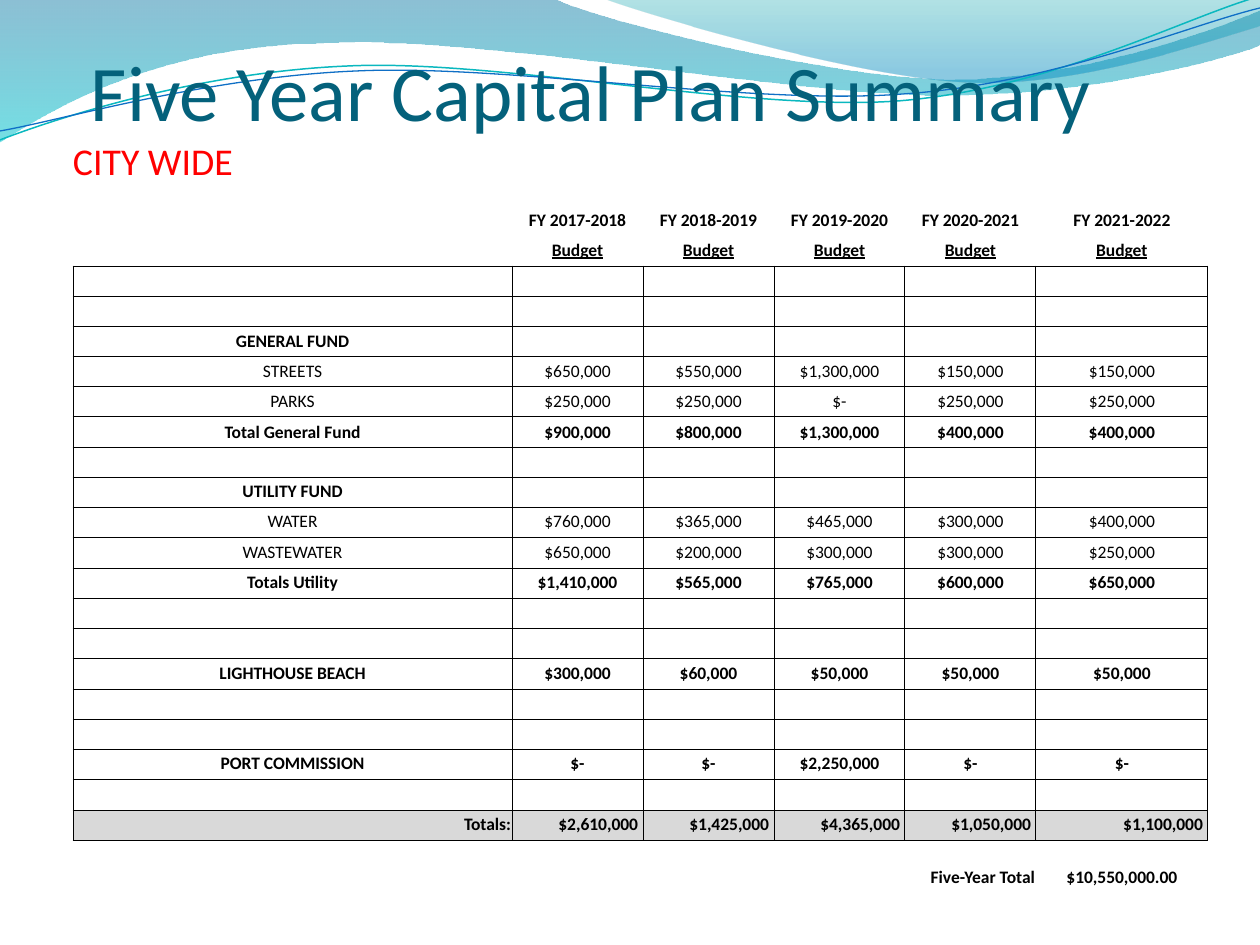
from itertools import pairwise
from math import cos, radians, sin

from lxml import etree
from pptx import Presentation
from pptx import util as u
from pptx.dml.color import RGBColor
from pptx.enum import text
from pptx.oxml.ns import qn

PX = u.Inches(1) / 126
FONT = "Calibri"
COLORS = {"title": "04617B", "subtitle": "FF0000", "ink": "000000",
          "cell": "FFFFFF", "total": "D9D9D9"}

# Table content: row style, label, then one amount per fiscal year
YEARS = ["FY 2017-2018", "FY 2018-2019", "FY 2019-2020", "FY 2020-2021", "FY 2021-2022"]
BLANK = ("plain", "")
ROWS = [
    ("header", "", *YEARS),
    ("subheader", "", *["Budget"] * len(YEARS)),
    BLANK,
    BLANK,
    ("bold", "GENERAL FUND"),
    ("plain", "STREETS", "$650,000", "$550,000", "$1,300,000", "$150,000", "$150,000"),
    ("plain", "PARKS", "$250,000", "$250,000", "$-", "$250,000", "$250,000"),
    ("bold", "Total General Fund", "$900,000", "$800,000", "$1,300,000", "$400,000", "$400,000"),
    BLANK,
    ("bold", "UTILITY FUND"),
    ("plain", "WATER", "$760,000", "$365,000", "$465,000", "$300,000", "$400,000"),
    ("plain", "WASTEWATER", "$650,000", "$200,000", "$300,000", "$300,000", "$250,000"),
    ("bold", "Totals Utility", "$1,410,000", "$565,000", "$765,000", "$600,000", "$650,000"),
    BLANK,
    BLANK,
    ("bold", "LIGHTHOUSE BEACH", "$300,000", "$60,000", "$50,000", "$50,000", "$50,000"),
    BLANK,
    BLANK,
    ("bold", "PORT COMMISSION", "$-", "$-", "$2,250,000", "$-", "$-"),
    BLANK,
    ("total", "Totals:", "$2,610,000", "$1,425,000", "$4,365,000", "$1,050,000", "$1,100,000"),
    ("footer", "", "", "", "", "Five-Year Total", "$10,550,000.00"),
]
TABLE_LEFT, TABLE_TOP = 73, 183
COLUMN_WIDTHS = [439, 131, 131, 131, 131, 172]
END_ROW, ROW_STEP = 53, 30.24
BORDERS = {  # sides drawn per row style; the other styles draw all four
    "header": "", "subheader": "B", "footer": "T",
}

# Header waves in px, as seen on the slide: one point is a line, three are a Bezier curve
WAVES = [
    {"box": (-1, -1, 1262, 143), "start": (0, 0),
     "segments": [[(554, -1)],
                  [(600, 21), (837, 79), (955, 79)], [(1075, 79), (1207, 33), (1260, 11)],
                  [(1261, 45)],
                  [(1239, 55), (1096, 96), (940, 95)], [(784, 95), (481, 35), (324, 43)],
                  [(163, 45), (58, 105), (-1, 142)], [(0, 0)]],
     "stops": [(0, "0074A1", 45), (1, "00C6CF", 55)]},
    {"box": (604, -1, 656, 88), "start": (604, -1),
     "segments": [[(642, 14), (859, 78), (969, 82)], [(1079, 87), (1211, 40), (1260, 26)],
                  [(1260, 0)], [(604, -1)]],
     "stops": [(0, "00A1A9", 30), (0.8, "008BBF", 45)]},
    {"box": (-3, 28, 1263, 89), "start": (0, 140), "tilt": -2.7,
     "segments": [[(60, 117), (199, 72), (349, 66)], [(498, 59), (747, 112), (898, 101)],
                  [(1050, 89), (1182, 19), (1257, -3)]],
     "line": ("0AB8BF", 0.85)},
    {"box": (-3, 38, 1264, 73), "start": (0, 131), "tilt": -2.7,
     "segments": [[(59, 121), (207, 77), (357, 71)], [(508, 64), (752, 106), (903, 94)],
                  [(1053, 84), (1186, 26), (1260, 8)]],
     "line": ("0F6FC6", 0.75)},
]


def px(length):
    return u.Emu(round(length * PX))


def rgb(value):
    return RGBColor.from_string(value)


def local_point(point, box, tilt):
    """Turn a slide point back by the tilt and measure it from the box corner."""
    left, top, width, height = box
    dx, dy = point[0] - left - width / 2, point[1] - top - height / 2
    c, s = cos(radians(-tilt)), sin(radians(-tilt))
    return px(width / 2 + dx * c - dy * s), px(height / 2 + dx * s + dy * c)


def draw_outline(shape, wave):
    outline = next(shape._element.iter(qn("a:path")))
    for child in list(outline):
        outline.remove(child)
    closed = "stops" in wave
    if not closed:
        outline.set("fill", "none")
    for index, points in enumerate([[wave["start"]], *wave["segments"]]):
        command = "moveTo" if index == 0 else "lnTo" if len(points) == 1 else "cubicBezTo"
        element = etree.SubElement(outline, qn(f"a:{command}"))
        for point in points:
            x, y = local_point(point, wave["box"], wave.get("tilt", 0))
            etree.SubElement(element, qn("a:pt"), x=str(x), y=str(y))
    if closed:
        etree.SubElement(outline, qn("a:close"))


def add_wave(slide, wave):
    left, top, width, height = wave["box"]
    builder = slide.shapes.build_freeform(px(left), px(top))
    builder.add_line_segments([(px(left + width), px(top + height))], close=False)
    shape = builder.convert_to_shape()
    draw_outline(shape, wave)
    shape.rotation = wave.get("tilt", 0)
    shape.shadow.inherit = False
    if "line" in wave:
        color, line_width = wave["line"]
        shape.fill.background()
        shape.line.color.rgb = rgb(color)
        shape.line.width = u.Pt(line_width)
        return
    shape.line.fill.background()
    shape.fill.gradient()
    shape.fill.gradient_angle = 270
    for stop, (position, color, _) in zip(shape.fill.gradient_stops, wave["stops"]):
        stop.position = position
        stop.color.rgb = rgb(color)
    colors = shape._element.spPr.iter(qn("a:srgbClr"))
    for element, (_, _, opacity) in zip(colors, wave["stops"]):
        etree.SubElement(element, qn("a:alpha"), val=str(opacity * 1000))


def add_title(slide):
    frame = slide.shapes.add_textbox(px(73), px(63), px(1134), px(120)).text_frame
    frame.word_wrap = True
    frame.vertical_anchor = text.MSO_ANCHOR.BOTTOM
    frame.margin_left = frame.margin_right = frame.margin_bottom = 0
    paragraph = frame.paragraphs[0]
    paragraph._p.get_or_add_pPr().set("indent", str(px(18)))
    lines = [("Five Year Capital Plan Summary", 45, "title"), ("CITY WIDE", 21.6, "subtitle")]
    for index, (line, size, color) in enumerate(lines):
        if index:
            paragraph.add_line_break()
        run = paragraph.add_run()
        run.text = line
        run.font.name = FONT
        run.font.size = u.Pt(size)
        run.font.color.rgb = rgb(COLORS[color])


def set_borders(cell, sides):
    properties = cell._tc.get_or_add_tcPr()
    for index, side in enumerate("LRTB"):
        border = etree.Element(qn(f"a:ln{side}"), w=str(u.Pt(0.5)))
        if side in sides:
            fill = etree.SubElement(border, qn("a:solidFill"))
            etree.SubElement(fill, qn("a:srgbClr"), val=COLORS["ink"])
        else:
            etree.SubElement(border, qn("a:noFill"))
        properties.insert(index, border)


def fill_cell(cell, style, content, column):
    right = style == "total" or content == "Five-Year Total"
    cell.vertical_anchor = text.MSO_ANCHOR.BOTTOM
    cell.margin_left = cell.margin_top = px(1)
    cell.margin_right = px(5 if style == "total" and column else 1)
    cell.margin_bottom = px(5)
    if style in ("header", "subheader"):
        cell.fill.background()
    else:
        cell.fill.solid()
        cell.fill.fore_color.rgb = rgb(COLORS["total" if style == "total" else "cell"])
    set_borders(cell, BORDERS.get(style, "LRTB"))

    paragraph = cell.text_frame.paragraphs[0]
    if not content:  # a small end mark keeps empty rows from growing
        paragraph._p.get_or_add_endParaRPr().set("sz", "1000")
        return
    paragraph.text = content
    paragraph.alignment = text.PP_ALIGN.RIGHT if right else text.PP_ALIGN.CENTER
    font = paragraph.font
    font.name = FONT
    font.size = u.Pt(10)
    font.bold = style != "plain"
    font.underline = style == "subheader"
    font.color.rgb = rgb(COLORS["ink"])


def add_budget_table(slide):
    edges = [0] + [round(END_ROW + ROW_STEP * i) for i in range(len(ROWS) - 1)]
    edges.append(edges[-1] + END_ROW)
    table = slide.shapes.add_table(len(ROWS), len(COLUMN_WIDTHS), px(TABLE_LEFT), px(TABLE_TOP),
                                   px(sum(COLUMN_WIDTHS)), px(edges[-1])).table
    table.first_row = table.horz_banding = False
    for column, width in zip(table.columns, COLUMN_WIDTHS):
        column.width = px(width)
    for row, (top, bottom), (style, *contents) in zip(table.rows, pairwise(edges), ROWS):
        row.height = px(bottom - top)
        contents += [""] * (len(COLUMN_WIDTHS) - len(contents))
        for column, (cell, content) in enumerate(zip(row.cells, contents)):
            fill_cell(cell, style, content, column)


def main():
    presentation = Presentation()
    presentation.slide_width, presentation.slide_height = px(1260), px(945)
    slide = presentation.slides.add_slide(presentation.slide_layouts[6])
    for wave in WAVES:
        add_wave(slide, wave)
    add_title(slide)
    add_budget_table(slide)
    presentation.save("out.pptx")


if __name__ == "__main__":
    main()
